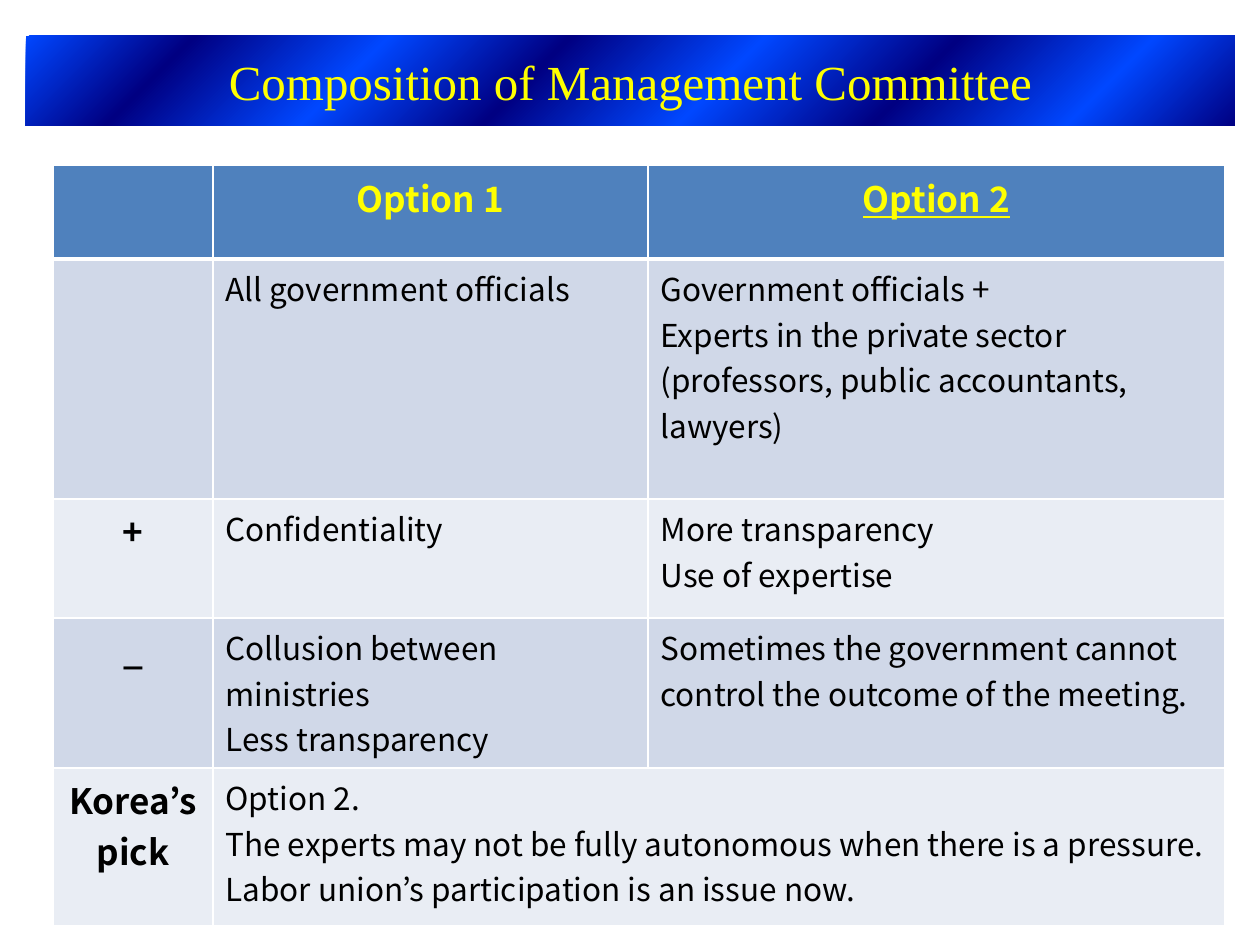
from dataclasses import dataclass

from lxml.etree import SubElement
from pptx import Presentation
from pptx.dml.color import RGBColor
from pptx.enum.shapes import MSO_SHAPE
from pptx.enum.text import MSO_ANCHOR, PP_ALIGN
from pptx.oxml import parse_xml
from pptx.oxml.ns import nsdecls, qn
from pptx.util import Pt

TITLE = "Composition of Management Committee"
ROWS = [
    [[], ["Option 1"], ["Option 2"]],
    [[], ["All government officials"],
     ["Government officials +", "Experts in the private sector",
      "(professors, public accountants, lawyers)"]],
    [["+"], ["Confidentiality"], ["More transparency", "Use of expertise"]],
    [["_"], ["Collusion between ministries", "Less transparency"],
     ["Sometimes the government cannot control the outcome of the meeting."]],
    [["Korea’s pick"],
     ["Option 2.",
      "The experts may not be fully autonomous when there is a pressure.",
      "Labor union’s participation is an issue now."], []],
]

PX = 914400 // 126
SLIDE = (1260, 945)
BANNER = (26, 36, 1209, 90)
TABLE_AT = (53, 165)
COL_WIDTHS = (160, 435, 577)
ROW_HEIGHTS = (94, 240, 119, 150, 158)
STOPS = (0, 13, 28, 43, 58, 72, 87, 100)


@dataclass(frozen=True)
class Theme:
    title_font: str = "Times New Roman"
    body_font: str = "Noto Sans CJK KR"
    title_size: int = 28
    label_size: int = 20
    body_size: int = 18
    yellow: str = "FFFF00"
    black: str = "000000"
    line: str = "FFFFFF"
    header: str = "4F81BD"
    bands: tuple = ("E9EDF4", "D0D8E8")
    gradient: tuple = ("000082", "0047FF")


THEME = Theme()


def px(*values):
    return [v * PX for v in values]


def write(tf, lines, align, color, **font):
    for i, line in enumerate(lines):
        p = tf.paragraphs[0] if i == 0 else tf.add_paragraph()
        p.alignment = align
        r = p.add_run()
        r.text = line
        r.font.color.rgb = RGBColor.from_string(color)
        for name, value in font.items():
            setattr(r.font, name, value)


def fill_radial(sp):
    """Fill with alternating blues that spread from the bottom right corner."""
    stops = "".join(
        f'<a:gs pos="{pos * 1000}"><a:srgbClr val="{THEME.gradient[i % 2]}"/></a:gs>'
        for i, pos in enumerate(STOPS))
    grad = parse_xml(
        f'<a:gradFill {nsdecls("a")} rotWithShape="1"><a:gsLst>{stops}</a:gsLst>'
        '<a:path path="circle"><a:fillToRect l="100000" t="100000"/></a:path>'
        '</a:gradFill>')
    sp._element.spPr.find(qn("a:prstGeom")).addnext(grad)


def set_borders(cell, bottom):
    tcPr = cell._tc.get_or_add_tcPr()
    widths = {"lnL": 1, "lnR": 1, "lnT": 1, "lnB": bottom}
    for i, (tag, width) in enumerate(widths.items()):
        ln = parse_xml(f'<a:{tag} {nsdecls("a")} w="{Pt(width)}"/>')
        SubElement(SubElement(ln, qn("a:solidFill")), qn("a:srgbClr"), val=THEME.line)
        tcPr.insert(i, ln)


def add_banner(s):
    sp = s.shapes.add_shape(MSO_SHAPE.RECTANGLE, *px(*BANNER))
    sp.shadow.inherit = False
    sp.line.fill.background()
    fill_radial(sp)
    sp.text_frame.word_wrap = True
    sp.text_frame.vertical_anchor = MSO_ANCHOR.MIDDLE
    write(sp.text_frame, [TITLE], PP_ALIGN.CENTER, THEME.yellow,
          name=THEME.title_font, size=Pt(THEME.title_size))


def add_options(s):
    size = px(sum(COL_WIDTHS), sum(ROW_HEIGHTS))
    table = s.shapes.add_table(len(ROWS), len(COL_WIDTHS), *px(*TABLE_AT), *size).table
    for col, width in zip(table.columns, px(*COL_WIDTHS)):
        col.width = width
    for row, height in zip(table.rows, px(*ROW_HEIGHTS)):
        row.height = height
    for i, row in enumerate(ROWS):
        for j, lines in enumerate(row):
            cell = table.cell(i, j)
            header = i == 0
            label = header or j == 0
            cell.fill.solid()
            cell.fill.fore_color.rgb = RGBColor.from_string(
                THEME.header if header else THEME.bands[i % 2])
            set_borders(cell, 3 if header else 1)
            write(cell.text_frame, lines,
                  PP_ALIGN.CENTER if label else PP_ALIGN.LEFT,
                  THEME.yellow if header else THEME.black,
                  name=THEME.body_font, bold=label,
                  size=Pt(THEME.label_size if label else THEME.body_size),
                  underline=lines == ["Option 2"])
    last = len(ROWS) - 1
    table.cell(last, 1).merge(table.cell(last, 2))


def main():
    prs = Presentation()
    prs.slide_width, prs.slide_height = px(*SLIDE)
    s = prs.slides.add_slide(prs.slide_layouts[6])
    add_banner(s)
    add_options(s)
    prs.save("out.pptx")


if __name__ == "__main__":
    main()
